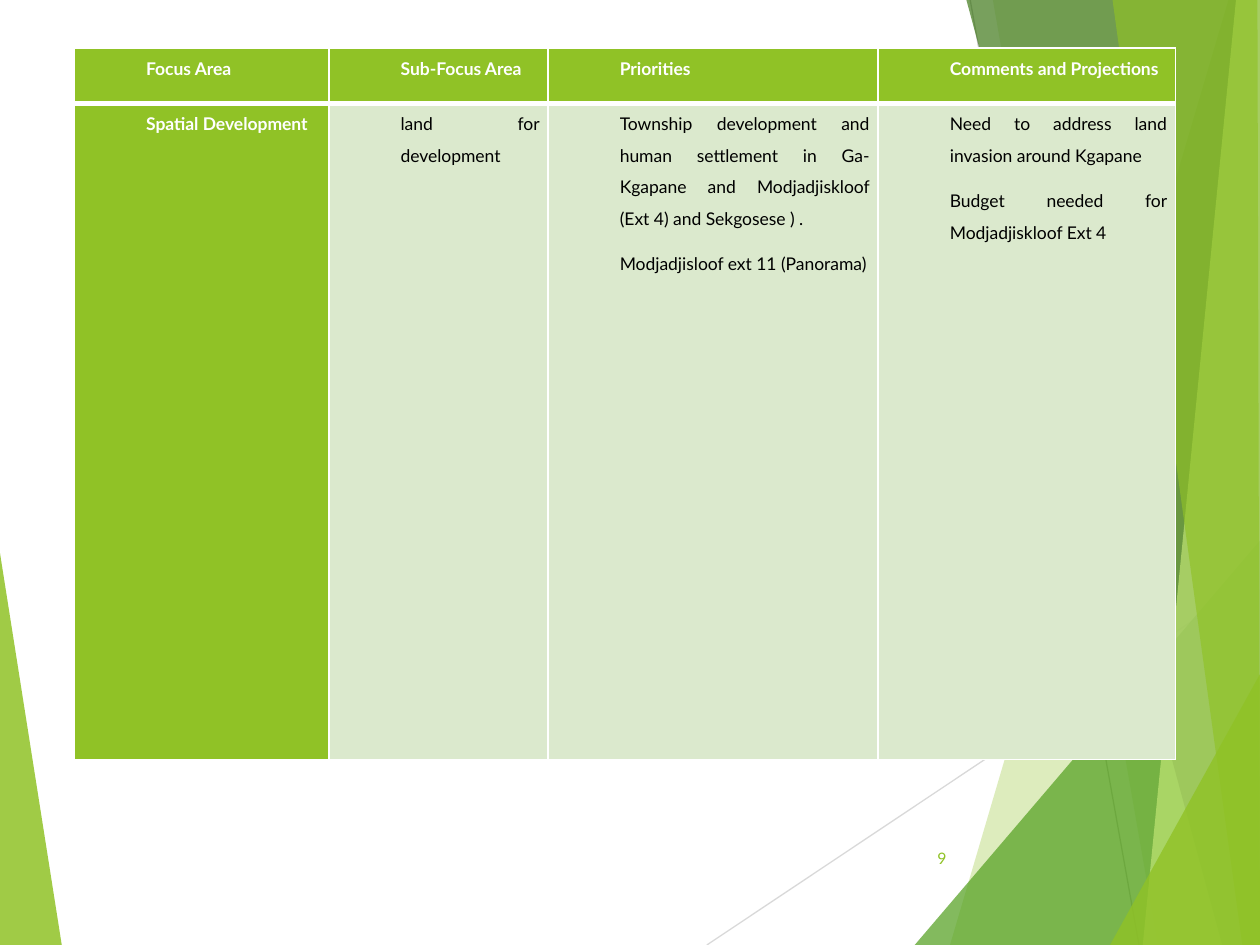
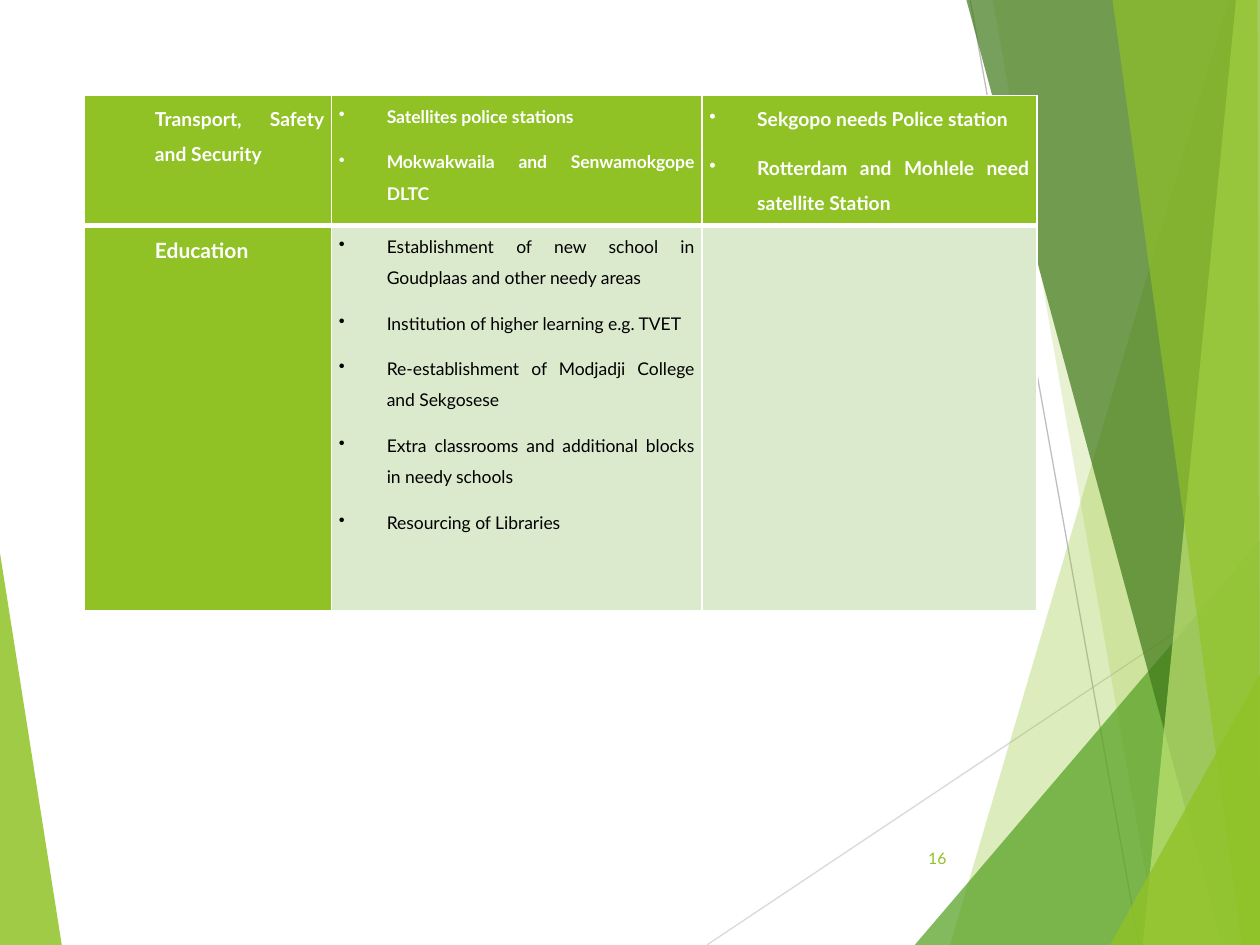
from lxml.etree import SubElement
from pptx import Presentation
from pptx.dml.color import RGBColor
from pptx.enum.shapes import MSO_CONNECTOR as Link
from pptx.enum.text import MSO_ANCHOR as Anchor, PP_ALIGN as Align
from pptx.oxml.ns import qn
from pptx.util import Inches, Pt

WHITE = RGBColor(0xFF, 0xFF, 0xFF)
BLACK = RGBColor(0x00, 0x00, 0x00)
LIME = RGBColor(0x90, 0xC2, 0x26)
LEAF = RGBColor(0x54, 0xA0, 0x21)
PINE = RGBColor(0x3F, 0x78, 0x19)
MINT = RGBColor(0xC0, 0xE4, 0x74)
PALE = RGBColor(0xDB, 0xE9, 0xCD)
SILVER = RGBColor(0xD9, 0xD9, 0xD9)
GREY = RGBColor(0xBF, 0xBF, 0xBF)

FONT = "Lato"
COLS, ROWS = 100, 75

RAYS = [
    (SILVER, (56.1, 75), (100, 45.7)),
    (GREY, (77, 0), (90.4, 75)),
]
SHARDS = [
    (LIME, 30, [(97.5, 0), (75.4, 75), (100, 75), (100, 0)]),
    (LIME, 20, [(78.8, 0), (91.9, 75), (100, 75), (100, 0)]),
    (LEAF, 72, [(72.6, 75), (100, 42.9), (100, 75)]),
    (PINE, 70, [(76.7, 0), (97, 75), (100, 75), (100, 0)]),
    (MINT, 70, [(98.1, 0), (90.7, 75), (100, 75), (100, 0)]),
    (LIME, 65, [(88.3, 0), (98.6, 75), (100, 75), (99.8, 0)]),
    (LIME, 80, [(88.1, 75), (100, 53.5), (100, 75)]),
]
WEDGE = (LIME, 85, [(0, 43.9), (4.9, 75), (0, 75)])

LAND = [
    [
        (10, "Focus Area"),
        (10, "Sub-Focus Area"),
        (10, "Priorities"),
        (10, "Comments and Projections"),
    ],
    [
        (10, "Spatial Development"),
        (10, "land for development"),
        (
            10,
            "Township development and human settlement in Ga-Kgapane and "
            "Modjadjiskloof (Ext 4) and Sekgosese ) .",
            "Modjadjisloof ext 11 (Panorama)",
        ),
        (
            10,
            "Need to address land invasion around Kgapane",
            "Budget needed for Modjadjiskloof Ext 4",
        ),
    ],
]
SCHOOLS = [
    [
        (11, "Transport, Safety and Security"),
        (10, "Satellites police stations", "Mokwakwaila and Senwamokgope DLTC"),
        (
            11,
            "Sekgopo needs Police station",
            "Rotterdam and Mohlele need satellite Station",
        ),
    ],
    [
        (12, "Education"),
        (
            10,
            "Establishment of new school in Goudplaas and other needy areas",
            "Institution of higher learning e.g. TVET",
            "Re-establishment of Modjadji College and Sekgosese",
            "Extra classrooms and additional blocks in needy schools",
            "Resourcing of Libraries",
        ),
        (10,),
    ],
]


def write(frame, lines, size, color, bold=False, align=Align.JUSTIFY,
          space=None, after=None, left=0, bullet=None):
    frame.word_wrap = True
    for n, line in enumerate(lines):
        para = frame.add_paragraph() if n else frame.paragraphs[0]
        para.alignment = align
        para.line_spacing = space
        if after is not None:
            para.space_after = Pt(after)
        if left:
            props = para._p.get_or_add_pPr()
            props.set("marL", str(Inches(left)))
            props.set("indent", str(-Inches(left) if bullet else 0))
            if bullet:
                SubElement(props, qn("a:buChar")).set("char", bullet)
        run = para.add_run()
        run.text = line
        font = run.font
        font.name, font.size, font.bold = FONT, Pt(size), bold
        font.color.rgb = color


def edge(cell, side, width):
    line = SubElement(cell._tc.get_or_add_tcPr(), qn(f"a:ln{side}"))
    line.set("w", str(Pt(width)))
    fill = SubElement(line, qn("a:solidFill"))
    SubElement(fill, qn("a:srgbClr")).set("val", str(WHITE))


class Deck:
    def __init__(self):
        self.show = Presentation()
        self.show.slide_width = Inches(10)
        self.show.slide_height = Inches(7.5)
        self.slide = None

    def x(self, col):
        return round(self.show.slide_width * col / COLS)

    def y(self, row):
        return round(self.show.slide_height * row / ROWS)

    def page(self, number):
        self.slide = self.show.slides.add_slide(self.show.slide_layouts[6])
        self.shard(*WEDGE)
        for ray in RAYS:
            self.ray(*ray)
        for shard in SHARDS:
            self.shard(*shard)
        self.label(number)

    def shard(self, color, alpha, points):
        spots = [(self.x(col), self.y(row)) for col, row in points]
        draft = self.slide.shapes.build_freeform(*spots[0])
        draft.add_line_segments(spots[1:], close=True)
        shape = draft.convert_to_shape()
        shape.shadow.inherit = False
        shape.line.fill.background()
        shape.fill.solid()
        shape.fill.fore_color.rgb = color
        tint = shape._element.spPr.find(f".//{qn('a:srgbClr')}")
        SubElement(tint, qn("a:alpha")).set("val", str(alpha * 1000))

    def ray(self, color, start, end):
        line = self.slide.shapes.add_connector(
            Link.STRAIGHT, self.x(start[0]), self.y(start[1]),
            self.x(end[0]), self.y(end[1]))
        line.line.color.rgb = color
        line.line.width = Pt(0.75)
        SubElement(line._element.spPr, qn("a:effectLst"))

    def label(self, number):
        box = self.slide.shapes.add_textbox(
            self.x(70.5), self.y(66.1), self.x(5.6), self.y(4))
        box.text_frame.vertical_anchor = Anchor.MIDDLE
        write(box.text_frame, [str(number)], 9, LIME, align=Align.RIGHT)

    def table(self, data, left, top, widths, heights, inset, bullet=None):
        table = self.slide.shapes.add_table(
            len(data), len(widths), self.x(left), self.y(top),
            self.x(sum(widths)), self.y(sum(heights))).table
        for col, width in zip(table.columns, widths):
            col.width = self.x(width)
        for row, height in zip(table.rows, heights):
            row.height = self.y(height)
        for r, row in enumerate(data):
            for c, (size, *lines) in enumerate(row):
                self.cell(table.cell(r, c), lines, size, r == 0,
                          r == 0 or c == 0, inset, bullet if c else None)

    def cell(self, cell, lines, size, head, strong, inset, bullet):
        cell.margin_left = cell.margin_right = self.x(inset)
        cell.margin_top = cell.margin_bottom = 0
        for side in "LRTB":
            edge(cell, side, 3 if side == ("B" if head else "T") else 1)
        cell.fill.solid()
        cell.fill.fore_color.rgb = LIME if strong else PALE
        write(cell.text_frame, lines, size, WHITE if strong else BLACK,
              bold=strong, space=1.5, after=8,
              left=0.38 if bullet else 0.5, bullet=bullet)


def main():
    deck = Deck()
    deck.page(9)
    deck.table(LAND, 5.9, 3.8, [20.2, 17.4, 26.2, 23.6], [4.4, 52.1], 0.7)
    deck.page(16)
    deck.table(SCHOOLS, 6.7, 7.6, [19.6, 29.4, 26.6], [10.3, 30.6], 0.6,
               bullet="•")
    deck.show.save("out.pptx")


if __name__ == "__main__":
    main()
